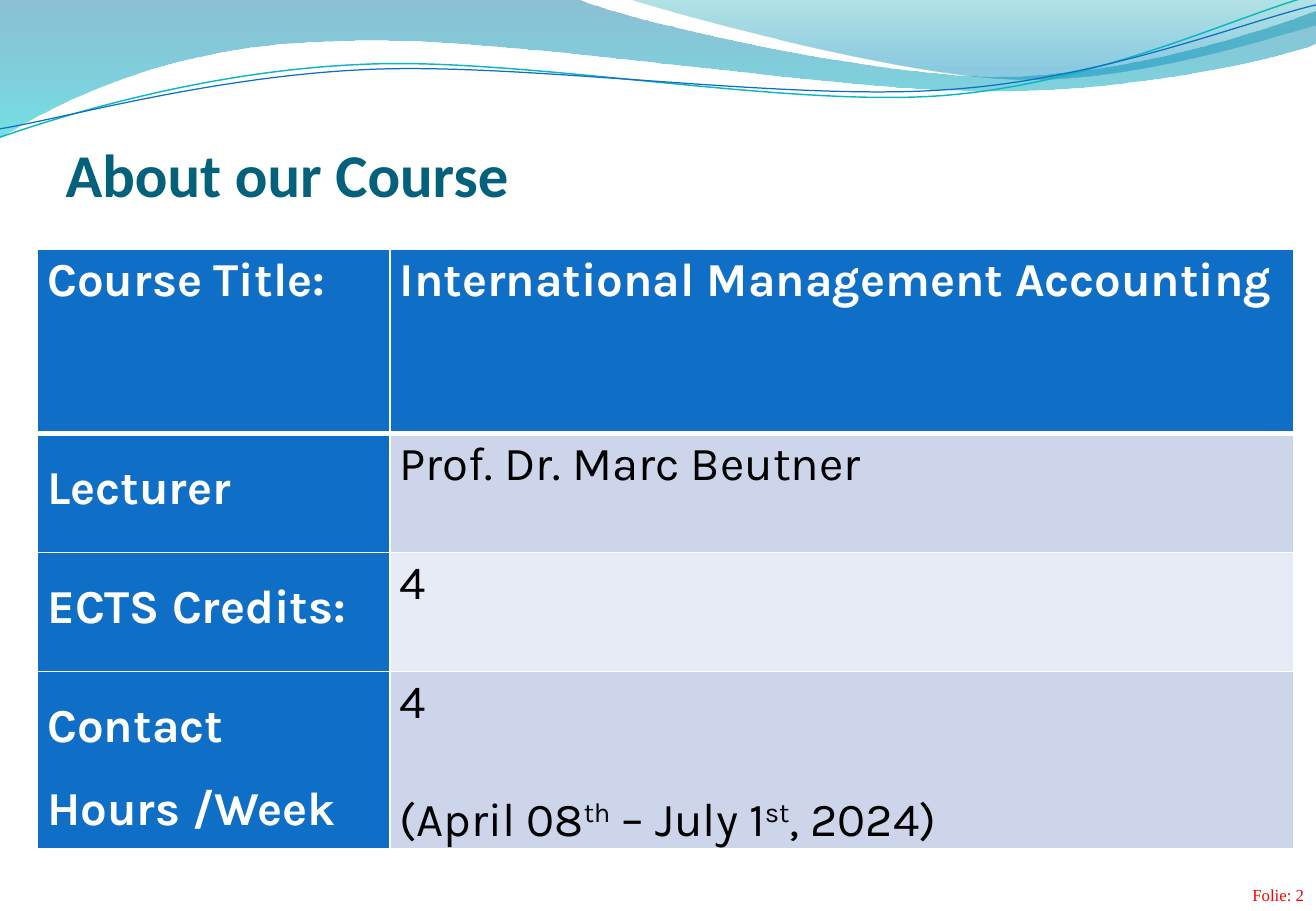
from lxml.etree import SubElement
from pptx import Presentation
from pptx.dml.color import RGBColor
from pptx.enum.text import MSO_ANCHOR, PP_ALIGN
from pptx.oxml.ns import qn
from pptx.util import Inches, Pt

WHITE = RGBColor(0xFF, 0xFF, 0xFF)
BLACK = RGBColor(0, 0, 0)
RED = RGBColor(0xFF, 0, 0)
NAVY = RGBColor(0x04, 0x61, 0x7B)
BLUE = RGBColor(0x0F, 0x6F, 0xC6)
TEAL = RGBColor(0x0A, 0xB8, 0xBF)
BAND = RGBColor(0xCC, 0xD5, 0xEA)
PALE = RGBColor(0xE7, 0xEB, 0xF5)

# Content: a cell is a list of paragraphs, a paragraph a list of (text, raised)
TITLE = "About our Course"
FOOTER = "Folie: 2"
ROWS = [
    ("Course Title:", [[("International Management Accounting", False)]]),
    ("Lecturer", [[("Prof. Dr. Marc Beutner", False)]]),
    ("ECTS Credits:", [[("4", False)]]),
    ("Contact\vHours /Week", [
        [("4", False)],
        [("(April 08", False), ("th", True), (" – July 1", False),
         ("st", True), (", 2024)", False)]]),
]
WIDTHS = [2.9, 7.44]
HEIGHTS = [1.52, 0.98, 0.98, 1.45]

# Wave outlines: two numbers make a line, six a Bézier curve
BANDS = [
    ([(0, 0), (4.77, 0), (5.15, 0.17, 7.19, 0.63, 8.22, 0.63),
      (9.24, 0.63, 10.38, 0.26, 10.83, 0.09), (10.83, 0.36),
      (10.65, 0.44, 9.42, 0.76, 8.08, 0.75),
      (6.74, 0.75, 4.14, 0.28, 2.79, 0.34),
      (1.4, 0.36, 0.5, 0.83, 0, 1.13)],
     [(0, RGBColor(0, 0x74, 0xA1), 45), (100, RGBColor(0, 0xC6, 0xCF), 55)]),
    ([(5.19, 0), (5.52, 0.11, 7.39, 0.62, 8.33, 0.65),
      (9.27, 0.69, 10.42, 0.32, 10.83, 0.21), (10.83, 0)],
     [(0, RGBColor(0, 0xA1, 0xA9), 30), (80, RGBColor(0, 0x8B, 0xBF), 45)]),
]
LINES = [
    ([(0, 1.13), (0.52, 0.95, 1.71, 0.58, 3, 0.53),
      (4.28, 0.47, 6.42, 0.88, 7.72, 0.79),
      (9.02, 0.7, 10.17, 0.13, 10.81, -0.04)], TEAL, 0.85),
    ([(0, 1.06), (0.51, 0.98, 1.77, 0.62, 3.07, 0.57),
      (4.36, 0.52, 6.47, 0.83, 7.76, 0.74),
      (9.06, 0.66, 10.2, 0.19, 10.83, 0.04)], BLUE, 0.75),
]


def draw(segs, close):
    """Build an outline, then join each three control points into a curve."""
    pts = [(Inches(x), Inches(y)) for seg in segs
           for x, y in zip(seg[::2], seg[1::2])]
    pen = slide.shapes.build_freeform(*pts[0])
    pen.add_line_segments(pts[1:], close=close)
    shape = pen.convert_to_shape()
    shape.shadow.inherit = False
    legs = iter(list(shape._element.spPr.iter(qn("a:lnTo"))))
    for seg in segs[1:]:
        leg = next(legs)
        if len(seg) == 6:
            curve = SubElement(leg.getparent(), qn("a:cubicBezTo"))
            leg.addprevious(curve)
            for part in (leg, next(legs), next(legs)):
                curve.append(part[0])
                part.getparent().remove(part)
    return shape


def style(para, size, name, color, bold=False):
    font = para.font
    font.size, font.name, font.bold = Pt(size), name, bold
    font.color.rgb = color


def border(cell, sides):
    """Add white borders, given as (tag, points), ahead of the fill."""
    props = cell._tc.get_or_add_tcPr()
    for spot, (tag, width) in enumerate(sides):
        edge = SubElement(props, qn(tag), w=str(Pt(width)))
        fill = SubElement(edge, qn("a:solidFill"))
        SubElement(fill, qn("a:srgbClr"), val=str(WHITE))
        props.insert(spot, edge)


deck = Presentation()
deck.slide_width, deck.slide_height = Inches(10.83), Inches(7.5)
slide = deck.slides.add_slide(deck.slide_layouts[5])

# Waves
for segs, stops in BANDS:
    wave = draw(segs, True)
    wave.line.fill.background()
    wave.fill.gradient()
    wave.fill.gradient_angle = 270
    for stop, (place, color, alpha) in zip(wave.fill.gradient_stops, stops):
        stop.position = place / 100
        stop.color.rgb = color
    for tint, (place, color, alpha) in zip(
            wave._element.spPr.iter(qn("a:srgbClr")), stops):
        SubElement(tint, qn("a:alpha"), val=str(alpha * 1000))
for segs, color, width in LINES:
    curve = draw(segs, False)
    curve.fill.background()
    curve.line.color.rgb = color
    curve.line.width = Pt(width)

# Title
title = slide.shapes.title
title.left, title.top = Inches(0.54), Inches(0.99)
title.width, title.height = Inches(9.75), Inches(0.74)
frame = title.text_frame
frame.text = TITLE
frame.vertical_anchor = MSO_ANCHOR.BOTTOM
frame.margin_left = frame.margin_right = frame.margin_bottom = 0
frame.paragraphs[0].alignment = PP_ALIGN.LEFT
style(frame.paragraphs[0], 36, "Calibri", NAVY, True)

# Course table
table = slide.shapes.add_table(
    len(ROWS), len(WIDTHS), Inches(0.31), Inches(2.05),
    Inches(sum(WIDTHS)), Inches(sum(HEIGHTS))).table
for col, width in zip(table.columns, WIDTHS):
    col.width = Inches(width)
for r, (label, value) in enumerate(ROWS):
    table.rows[r].height = Inches(HEIGHTS[r])
    for c, paras in enumerate(([[(label, False)]], value)):
        cell = table.cell(r, c)
        head = r == 0 or c == 0
        cell.margin_left = cell.margin_right = Inches(0.08)
        cell.margin_top = cell.margin_bottom = 0
        cell.fill.solid()
        cell.fill.fore_color.rgb = BLUE if head else BAND if r % 2 else PALE
        border(cell, [("a:lnL", 1), ("a:lnR", 1),
                      ("a:lnT", 3 if r == 1 else 1),
                      ("a:lnB", 3 if r == 0 else 1)])
        frame = cell.text_frame
        for i, runs in enumerate(paras):
            para = frame.add_paragraph() if i else frame.paragraphs[0]
            para.line_spacing = 1.5 if r and c == 0 else 1.07
            para.alignment = PP_ALIGN.LEFT if len(paras) > 1 else PP_ALIGN.JUSTIFY
            if i:
                para.space_before = Pt(35)
            style(para, 28, "Karla", WHITE if head else BLACK, head)
            for text, raised in runs:
                if "\v" in text:
                    first, text = text.split("\v")
                    para.add_run().text = first
                    para.add_line_break()
                run = para.add_run()
                run.text = text
                if raised:
                    run.font._element.set("baseline", "30000")

# Slide number
note = slide.shapes.add_textbox(
    Inches(7.31), Inches(7.23), Inches(3.52), Inches(0.27)).text_frame
note.word_wrap = True
note.text = FOOTER
note.paragraphs[0].alignment = PP_ALIGN.RIGHT
style(note.paragraphs[0], 10, "Times New Roman", RED)

deck.save("out.pptx")
